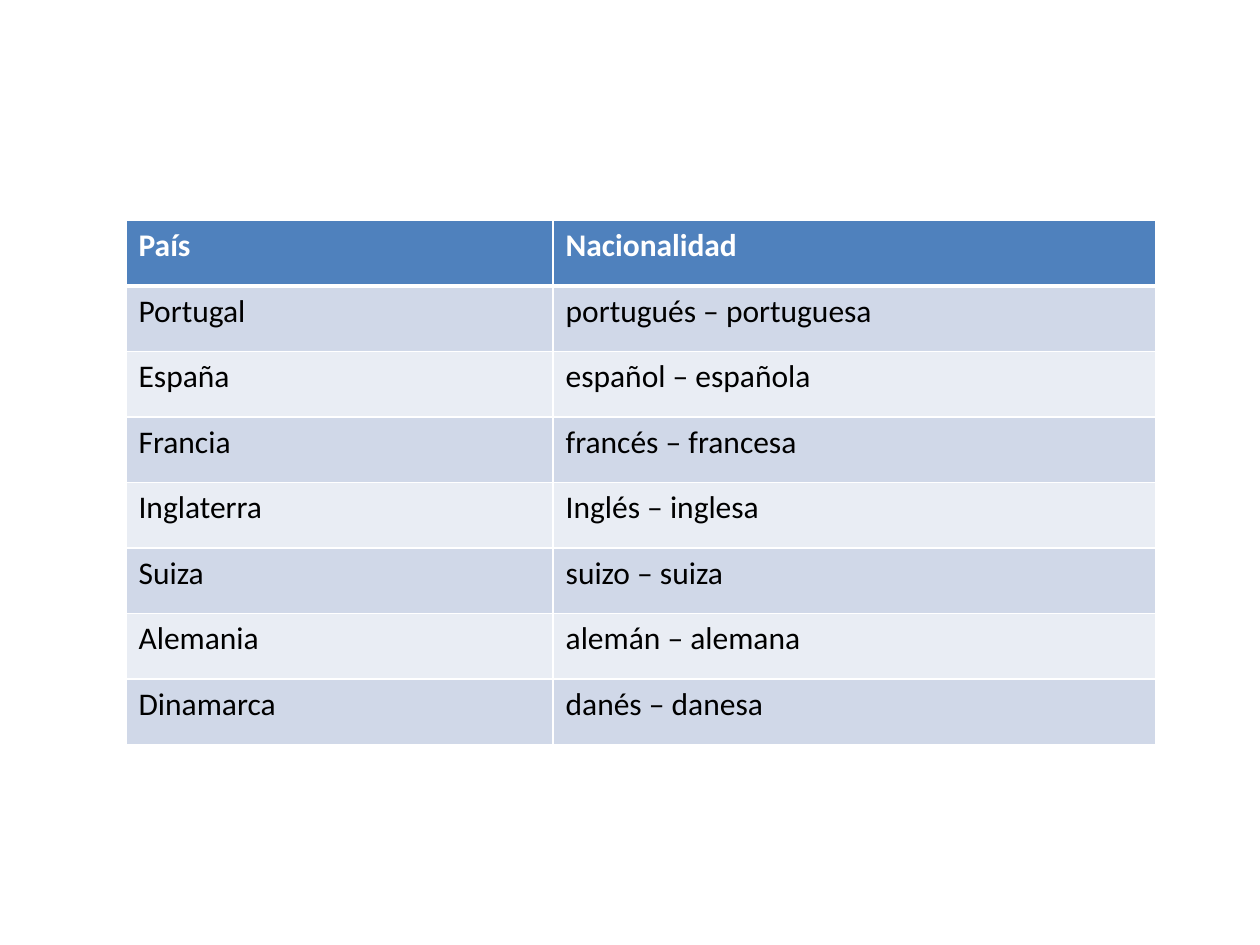
from lxml.etree import SubElement
from pptx import Presentation
from pptx.dml.color import RGBColor
from pptx.oxml.ns import qn
from pptx.util import Inches, Pt

WHITE = RGBColor(0xFF, 0xFF, 0xFF)
BLACK = RGBColor(0x00, 0x00, 0x00)
HEADER_BLUE = RGBColor(0x4F, 0x81, 0xBD)
BAND_DARK = RGBColor(0xD0, 0xD8, 0xE8)
BAND_LIGHT = RGBColor(0xE9, 0xED, 0xF4)

HEADINGS = ("País", "Nacionalidad")
NATIONALITIES = [
    ("Portugal", "portugués – portuguesa"),
    ("España", "español – española"),
    ("Francia", "francés – francesa"),
    ("Inglaterra", "Inglés – inglesa"),
    ("Suiza", "suizo – suiza"),
    ("Alemania", "alemán – alemana"),
    ("Dinamarca", "danés – danesa"),
]


class SlideBuilder:
    """Holds the text style and the slide being filled."""

    font_name = "Calibri"
    font_size = Pt(18)
    thin, thick = Pt(1), Pt(3)

    def __init__(self, deck):
        self.width, self.height = deck.slide_width, deck.slide_height
        self.slide = deck.slides.add_slide(deck.slide_layouts[6])

    def table(self, rows, left, top, column_shares, row_share):
        """Place a table; every length is a share of the slide's size."""
        frame = self.slide.shapes.add_table(
            len(rows), len(column_shares),
            int(left * self.width), int(top * self.height),
            int(sum(column_shares) * self.width),
            int(len(rows) * row_share * self.height))
        grid = frame.table
        for column, share in zip(grid.columns, column_shares):
            column.width = int(share * self.width)
        for row_index, texts in enumerate(rows):
            grid.rows[row_index].height = int(row_share * self.height)
            for column_index, text in enumerate(texts):
                self.cell(grid.cell(row_index, column_index), text, row_index)

    def cell(self, cell, text, row_index):
        is_header = row_index == 0
        self.borders(cell,
                     top=self.thick if row_index == 1 else self.thin,
                     bottom=self.thick if is_header else self.thin)
        cell.fill.solid()
        band = BAND_DARK if row_index % 2 else BAND_LIGHT
        cell.fill.fore_color.rgb = HEADER_BLUE if is_header else band
        cell.text_frame.text = text
        font = cell.text_frame.paragraphs[0].runs[0].font
        font.name, font.size, font.bold = self.font_name, self.font_size, is_header
        font.color.rgb = WHITE if is_header else BLACK

    def borders(self, cell, top, bottom):
        properties = cell._tc.get_or_add_tcPr()
        sides = {"L": self.thin, "R": self.thin, "T": top, "B": bottom}
        for side, weight in sides.items():
            line = SubElement(properties, qn(f"a:ln{side}"), w=str(weight))
            paint = SubElement(line, qn("a:solidFill"))
            SubElement(paint, qn("a:srgbClr"), val=str(WHITE))


def main():
    deck = Presentation()
    deck.slide_width, deck.slide_height = Inches(10), Inches(7.5)
    builder = SlideBuilder(deck)
    builder.table([HEADINGS, *NATIONALITIES], left=0.1, top=1.75 / 7.5,
                  column_shares=(0.339, 0.478), row_share=0.52 / 7.5)
    deck.save("out.pptx")


if __name__ == "__main__":
    main()
